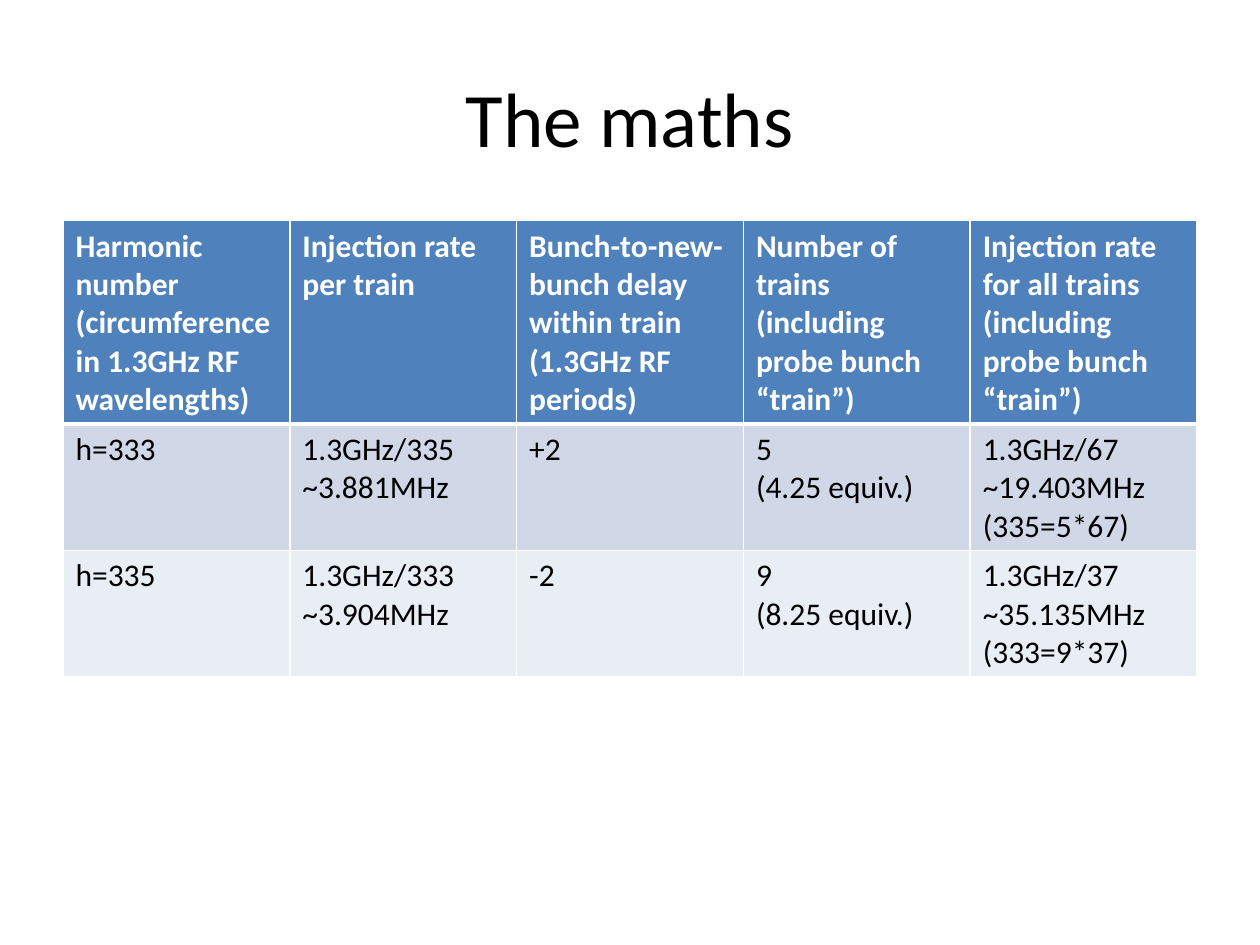
from lxml.etree import SubElement
from pptx import Presentation
from pptx.dml.color import RGBColor
from pptx.enum.text import MSO_ANCHOR, PP_ALIGN
from pptx.oxml.ns import qn
from pptx.util import Cm, Pt

COLOURS = {
    "text": "000000",
    "header_text": "FFFFFF",
    "border": "FFFFFF",
    "header": "4F81BD",
    "band_dark": "D0D8E8",
    "band_light": "E9EDF4",
}

# Line breaks separate paragraphs within a cell
MATHS_ROWS = [
    ["Harmonic number (circumference in 1.3GHz RF wavelengths)",
     "Injection rate per train",
     "Bunch-to-new-bunch delay within train (1.3GHz RF periods)",
     "Number of trains (including probe bunch “train”)",
     "Injection rate for all trains\n(including probe bunch “train”)"],
    ["h=333", "1.3GHz/335\n~3.881MHz", "+2", "5\n(4.25 equiv.)",
     "1.3GHz/67\n~19.403MHz\n(335=5*67)"],
    ["h=335", "1.3GHz/333\n~3.904MHz", "-2", "9\n(8.25 equiv.)",
     "1.3GHz/37\n~35.135MHz\n(333=9*37)"],
]


class SlideBuilder:
    font = "Calibri"
    title_size = Pt(44)
    body_size = Pt(18)

    def __init__(self, slide):
        self.slide = slide

    def style(self, paragraph, size, colour, bold=False):
        font = paragraph.font
        font.name, font.size, font.bold = self.font, size, bold
        font.color.rgb = RGBColor.from_string(COLOURS[colour])

    def title(self, text, left, top, width, height):
        frame = self.slide.shapes.add_textbox(left, top, width, height).text_frame
        frame.word_wrap = True
        frame.vertical_anchor = MSO_ANCHOR.MIDDLE
        frame.text = text
        heading = frame.paragraphs[0]
        heading.alignment = PP_ALIGN.CENTER
        self.style(heading, self.title_size, "text")

    def borders(self, cell, **widths):
        properties = cell._tc.get_or_add_tcPr()
        for side, width in widths.items():
            line = SubElement(properties, qn(f"a:ln{side}"), w=str(Pt(width)))
            fill = SubElement(line, qn("a:solidFill"))
            SubElement(fill, qn("a:srgbClr"), val=COLOURS["border"])

    def table(self, rows, left, top, width, heights):
        table = self.slide.shapes.add_table(
            len(rows), len(rows[0]), left, top, width, sum(heights)).table
        for r, (texts, height) in enumerate(zip(rows, heights)):
            table.rows[r].height = height
            is_header = r == 0
            band = "header" if is_header else ("band_light", "band_dark")[r % 2]
            for c, text in enumerate(texts):
                cell = table.cell(r, c)
                cell.text = text
                for paragraph in cell.text_frame.paragraphs:
                    self.style(paragraph, self.body_size,
                               "header_text" if is_header else "text", is_header)
                # Borders precede the fill in the cell properties
                self.borders(cell, L=1, R=1, T=3 if r == 1 else 1,
                             B=3 if is_header else 1)
                cell.fill.solid()
                cell.fill.fore_color.rgb = RGBColor.from_string(COLOURS[band])


def main():
    deck = Presentation()
    deck.slide_width, deck.slide_height = Cm(25.4), Cm(19.05)
    builder = SlideBuilder(deck.slides.add_slide(deck.slide_layouts[6]))

    margin = Cm(1.27)
    content_width = deck.slide_width - 2 * margin

    # Title
    builder.title("The maths", margin, Cm(0.76), content_width, Cm(3.18))

    # Injection rates for each harmonic number
    builder.table(MATHS_ROWS, margin, Cm(4.45), content_width,
                  [Cm(4.1), Cm(2.55), Cm(2.55)])

    deck.save("out.pptx")


if __name__ == "__main__":
    main()
